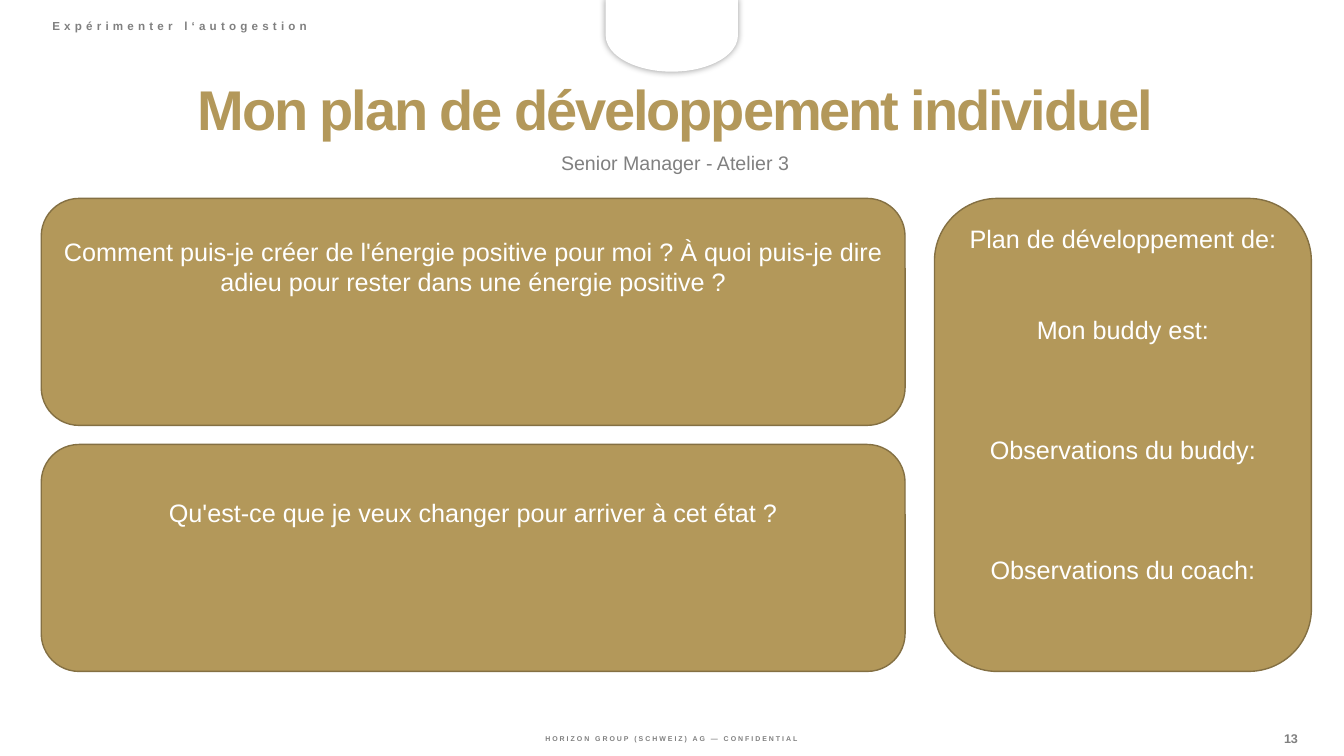
from lxml import etree
from pptx import Presentation
from pptx.dml.color import RGBColor
from pptx.enum.shapes import MSO_SHAPE
from pptx.enum.text import MSO_ANCHOR, MSO_AUTO_SIZE, PP_ALIGN
from pptx.oxml.ns import qn
from pptx.util import Cm, Pt

GOLD = RGBColor(0xB3, 0x98, 0x5A)
DARK_GOLD = RGBColor(0x84, 0x70, 0x43)
GREY = RGBColor(0x80, 0x80, 0x80)
WHITE = RGBColor(0xFF, 0xFF, 0xFF)

LEFT = 1.04
CONTENT_TOP = 5.0
CARD_WIDTH, CARD_HEIGHT, CARD_GAP = 21.77, 5.72, 0.48
LINE_HEIGHT = 21.5


def place(shape, left, top, width, height):
    shape.left, shape.top = Cm(left), Cm(top)
    shape.width, shape.height = Cm(width), Cm(height)


def format_span(span, size, color, bold=False, tracking=0):
    span.font.name = "Arial"
    span.font.size = Pt(size)
    span.font.bold = bold
    span.font.color.rgb = color
    if tracking:
        span.font._element.set("spc", str(round(tracking * 100)))


def write_line(box, text, size, color, bold=False, tracking=0,
               align=PP_ALIGN.CENTER, spacing=1.0, anchor=MSO_ANCHOR.TOP):
    frame = box.text_frame
    frame.text = text
    frame.word_wrap = True
    frame.auto_size = MSO_AUTO_SIZE.NONE
    frame.vertical_anchor = anchor
    para = frame.paragraphs[0]
    para.alignment = align
    para.line_spacing = spacing
    para.space_before = Pt(0)
    format_span(para.runs[0], size, color, bold, tracking)


def add_label(page, text, area, size, **style):
    box = page.shapes.add_textbox(0, 0, 0, 0)
    place(box, *area)
    write_line(box, text, size, GREY, bold=True, **style)
    return box


def add_footer(page, text, area, size, tracking):
    box = add_label(page, text, area, size, tracking=tracking)
    frame = box.text_frame
    frame.margin_left = frame.margin_right = frame.margin_bottom = 0
    frame.margin_top = Cm(0.03)


def add_card(page, area, top_margin, entries):
    """Rounded card; each entry is a text and the blank lines above it."""
    card = page.shapes.add_shape(MSO_SHAPE.ROUNDED_RECTANGLE, 0, 0, 0, 0)
    place(card, *area)
    card.shadow.inherit = False
    card.fill.solid()
    card.fill.fore_color.rgb = GOLD
    card.line.color.rgb = DARK_GOLD
    card.line.width = Pt(1)
    frame = card.text_frame
    frame.word_wrap = True
    frame.vertical_anchor = MSO_ANCHOR.TOP
    frame.margin_left = frame.margin_right = Cm(0.23)
    frame.margin_top = Cm(top_margin)
    for number, (text, lines_above) in enumerate(entries):
        para = frame.add_paragraph() if number else frame.paragraphs[0]
        para.text = text
        para.alignment = PP_ALIGN.CENTER
        para.line_spacing = Pt(LINE_HEIGHT)
        para.space_before = Pt(lines_above * LINE_HEIGHT)
        format_span(para.runs[0], 18, WHITE)


def add_top_tab(page):
    tab = page.shapes.add_shape(MSO_SHAPE.FLOWCHART_DELAY, 0, 0, 0, 0)
    place(tab, 16.03, -0.76, 1.8, 3.3)
    tab.rotation = 90
    tab.fill.solid()
    tab.fill.fore_color.rgb = WHITE
    tab.line.color.rgb = WHITE
    tab.line.width = Pt(1)
    # Soft shadow all around
    tab.shadow.inherit = False
    effects = tab._element.spPr.find(qn("a:effectLst"))
    shadow = etree.SubElement(effects, qn("a:outerShdw"), blurRad=str(Pt(5)),
                              dist="0", dir="0", algn="ctr", rotWithShape="0")
    color = etree.SubElement(shadow, qn("a:srgbClr"), val="000000")
    etree.SubElement(color, qn("a:alpha"), val="40000")


def main():
    deck = Presentation()
    deck.slide_width, deck.slide_height = Cm(33.87), Cm(19.05)
    page = deck.slides.add_slide(deck.slide_layouts[0])

    # Footer and top tab
    add_footer(page, "HORIZON GROUP (SCHWEIZ) AG — CONFIDENTIAL",
               (10.49, 18.49, 12.88, 0.25), 5, 1.4)
    add_top_tab(page)
    add_footer(page, "13", (31.57, 18.39, 1.93, 0.41), 9, -0.1)

    # Headings
    title, subtitle = page.shapes.title, page.placeholders[1]
    place(subtitle, LEFT, 3.78, 31.95, 0.79)
    write_line(subtitle, "Senior Manager - Atelier 3", 14, GREY, spacing=0.8)
    place(title, LEFT, 1.93, 31.95, 1.8)
    write_line(title, "Mon plan de développement individuel", 40, GOLD,
               bold=True, tracking=-1.5, spacing=0.9, anchor=MSO_ANCHOR.MIDDLE)
    add_label(page, "Expérimenter l‘autogestion", (1.07, 0.41, 12.37, 0.53),
              8.3, tracking=3, align=PP_ALIGN.LEFT, spacing=0.8)

    # Plan card on the right
    add_card(page, (23.55, CONTENT_TOP, 9.5, 2 * CARD_HEIGHT + CARD_GAP), 0.18, [
        ("Plan de développement de:", 0),
        ("Mon buddy est:", 2),
        ("Observations du buddy:", 3),
        ("Observations du coach:", 3),
    ])

    # Question cards on the left
    questions = [
        ("Comment puis-je créer de l'énergie positive pour moi ? À quoi "
         "puis-je dire adieu pour rester dans une énergie positive ?", 0.69),
        ("Qu'est-ce que je veux changer pour arriver à cet état ?", 1.06),
    ]
    for row, (question, top_margin) in enumerate(questions):
        top = CONTENT_TOP + row * (CARD_HEIGHT + CARD_GAP)
        add_card(page, (LEFT, top, CARD_WIDTH, CARD_HEIGHT), top_margin,
                 [(question, 0)])

    deck.save("out.pptx")


if __name__ == "__main__":
    main()
